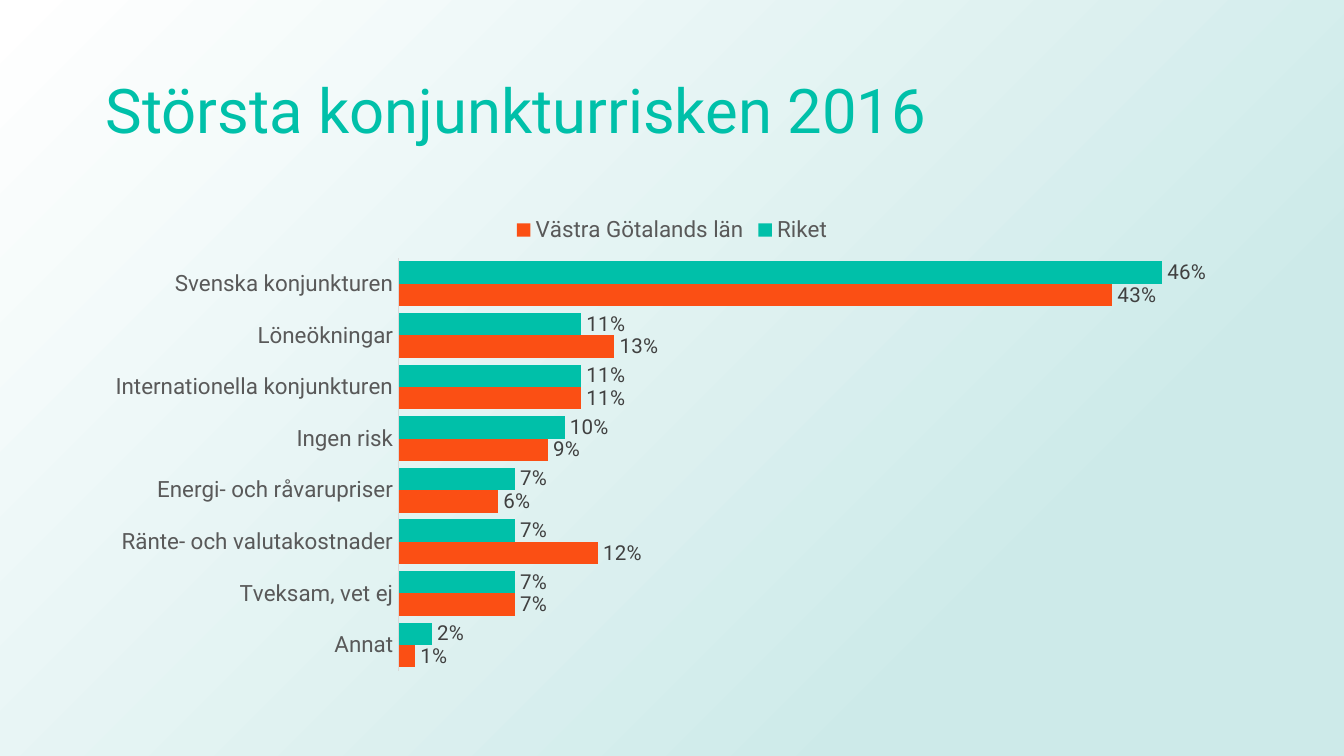
"""Build a slide with a bar chart of the largest economic risks in 2016."""
import pptx
import pptx.chart.data
import pptx.dml.color
import pptx.enum.chart
import pptx.enum.text
import pptx.util

Pt = pptx.util.Pt

TITLE = "Största konjunkturrisken 2016"
RISKS = [
    ("Svenska konjunkturen", 0.46, 0.43),
    ("Löneökningar", 0.11, 0.13),
    ("Internationella konjunkturen", 0.11, 0.11),
    ("Ingen risk", 0.10, 0.09),
    ("Energi- och råvarupriser", 0.07, 0.06),
    ("Ränte- och valutakostnader", 0.07, 0.12),
    ("Tveksam, vet ej", 0.07, 0.07),
    ("Annat", 0.02, 0.01),
]
REGIONS = [("Riket", "00C0A9"), ("Västra Götalands län", "FB4F14")]
BACKDROP = [("FFFFFF", 0), ("CDEAE9", 0.77)]
LEFT, WIDTH = Pt(49.5), Pt(621)


def assign(target, **values):
    for name, value in values.items():
        setattr(target, name, value)


def paint(color, value):
    color.rgb = pptx.dml.color.RGBColor.from_string(value)


def style(font, size, color):
    assign(font, name="Roboto", size=Pt(size), bold=False)
    paint(font.color, color)


def add_backdrop(page):
    fill = page.background.fill
    fill.gradient()
    fill.gradient_angle = 315
    for stop, (color, position) in zip(fill.gradient_stops, BACKDROP):
        paint(stop.color, color)
        stop.position = position


def add_title(page):
    box = page.shapes.title
    assign(box, left=LEFT, top=Pt(21.5), width=WIDTH, height=Pt(78.5))
    frame = box.text_frame
    assign(frame, text=TITLE, word_wrap=True,
           vertical_anchor=pptx.enum.text.MSO_ANCHOR.MIDDLE)
    para = frame.paragraphs[0]
    assign(para, alignment=pptx.enum.text.PP_ALIGN.LEFT, line_spacing=0.9)
    style(para.runs[0].font, 33, "00C0A9")


def add_risk_chart(page):
    kinds = pptx.enum.chart
    names, *columns = zip(*RISKS)
    data = pptx.chart.data.CategoryChartData(number_format="0%")
    data.categories = names
    for (region, _), values in zip(REGIONS, columns):
        data.add_series(region, values)
    chart = page.shapes.add_chart(
        kinds.XL_CHART_TYPE.BAR_CLUSTERED, LEFT, Pt(108), WIDTH, Pt(256.5), data
    ).chart
    assign(chart, has_title=False, has_legend=True)
    assign(chart.font, name="Calibri", size=Pt(10))
    assign(chart.legend, position=kinds.XL_LEGEND_POSITION.TOP, include_in_layout=False)
    style(chart.legend.font, 12, "595959")

    risks = chart.category_axis
    assign(risks, reverse_order=True, has_major_gridlines=False,
           major_tick_mark=kinds.XL_TICK_MARK.NONE,
           minor_tick_mark=kinds.XL_TICK_MARK.NONE)
    style(risks.tick_labels.font, 12, "595959")
    risks.format.line.width = Pt(0.75)
    paint(risks.format.line.color, "D9D9D9")
    assign(chart.value_axis, visible=False, has_major_gridlines=False, minimum_scale=0)

    plot = chart.plots[0]
    assign(plot, gap_width=30, overlap=0, vary_by_categories=False)
    for series, (_, color) in zip(plot.series, REGIONS):
        series.format.fill.solid()
        paint(series.format.fill.fore_color, color)
        labels = series.data_labels
        assign(labels, show_value=True, number_format="0%", number_format_is_linked=False,
               position=kinds.XL_LABEL_POSITION.OUTSIDE_END)
        style(labels.font, 11, "404040")


def main():
    deck = pptx.Presentation()
    assign(deck, slide_width=Pt(720), slide_height=Pt(405))
    page = deck.slides.add_slide(deck.slide_layouts[5])
    add_backdrop(page)
    add_title(page)
    add_risk_chart(page)
    deck.save("out.pptx")


if __name__ == "__main__":
    main()
